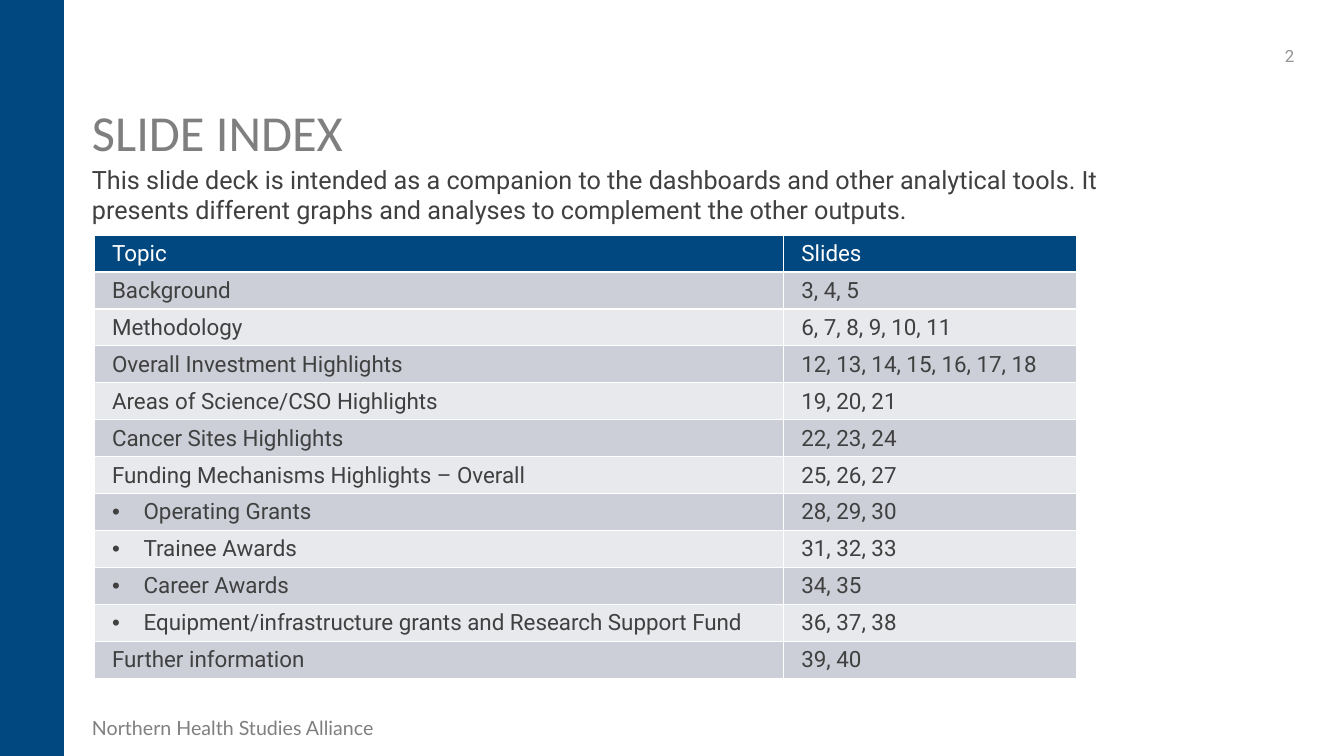
from lxml.etree import SubElement
from pptx import Presentation
from pptx.dml.color import RGBColor
from pptx.enum.shapes import MSO_SHAPE
from pptx.enum.text import MSO_ANCHOR, PP_ALIGN
from pptx.oxml.ns import qn
from pptx.util import Pt

BLUE, WHITE, GREY, DARK = "00487F", "FFFFFF", "7F7F7F", "404040"
BANDS = ["E7E9EC", "CCCFD8"]


def color(hex_value):
    return RGBColor.from_string(hex_value)


def write(frame, text, font, size, hex_value, **para_format):
    para = frame.paragraphs[0]
    for name, value in para_format.items():
        setattr(para, name, value)
    span = para.add_run()
    span.text = text
    span.font.name = font
    span.font.size = Pt(size)
    span.font.color.rgb = color(hex_value)
    return para


deck = Presentation()
deck.slide_width, deck.slide_height = Pt(960), Pt(540)
page = deck.slides.add_slide(deck.slide_layouts[6])

# Side bar
bar = page.shapes.add_shape(MSO_SHAPE.RECTANGLE, Pt(0), Pt(0), Pt(45.6), Pt(540))
bar.shadow.inherit = False
bar.fill.solid()
bar.fill.fore_color.rgb = color(BLUE)
bar.line.fill.background()

# Footer, title, page number and introduction
middle, top = MSO_ANCHOR.MIDDLE, MSO_ANCHOR.TOP
intro = ("This slide deck is intended as a companion to the dashboards and other "
         "analytical tools. It presents different graphs and analyses to "
         "complement the other outputs.")
texts = [
    ("Northern Health Studies Alliance", (58.6, 507.6, 231, 24.2), top, "Lato", 14, GREY, {}),
    ("SLIDE INDEX", (58.6, 54, 871, 85), middle, "Calibri", 36, GREY, {"line_spacing": 0.9}),
    ("2", (715.7, 25.2, 216, 28.8), middle, "Roboto", 12, "939393",
     {"alignment": PP_ALIGN.RIGHT}),
    (intro, (58.6, 113.8, 774.7, 51), top, "Roboto", 18, DARK, {}),
]
for text, place, anchor, font, size, hex_value, para_format in texts:
    box = page.shapes.add_textbox(*[Pt(length) for length in place])
    box.text_frame.word_wrap = True
    box.text_frame.vertical_anchor = anchor
    write(box.text_frame, text, font, size, hex_value, **para_format)

# Index table: a topic starting with a bullet is indented
rows = [
    ("Topic", "Slides"),
    ("Background", "3, 4, 5"),
    ("Methodology", "6, 7, 8, 9, 10, 11"),
    ("Overall Investment Highlights", "12, 13, 14, 15, 16, 17, 18"),
    ("Areas of Science/CSO Highlights", "19, 20, 21"),
    ("Cancer Sites Highlights", "22, 23, 24"),
    ("Funding Mechanisms Highlights – Overall", "25, 26, 27"),
    ("•Operating Grants", "28, 29, 30"),
    ("•Trainee Awards", "31, 32, 33"),
    ("•Career Awards", "34, 35"),
    ("•Equipment/infrastructure grants and Research Support Fund", "36, 37, 38"),
    ("Further information", "39, 40"),
]
table = page.shapes.add_table(len(rows), 2, Pt(67.1), Pt(167.8), Pt(702), Pt(316.8)).table
table.columns[0].width, table.columns[1].width = Pt(492.4), Pt(209.6)
cell_format = {"margin_left": Pt(13), "margin_right": Pt(13),
               "margin_top": Pt(3.6), "margin_bottom": Pt(3.6)}

for row_index, row in enumerate(rows):
    header = row_index == 0
    table.rows[row_index].height = Pt(26.4)
    for column_index, text in enumerate(row):
        cell = table.cell(row_index, column_index)
        for name, value in cell_format.items():
            setattr(cell, name, value)
        cell.vertical_anchor = MSO_ANCHOR.BOTTOM if header else middle

        # White borders come before the fill
        cell_properties = cell._tc.get_or_add_tcPr()
        for side in ("a:lnL", "a:lnR", "a:lnT", "a:lnB"):
            border = SubElement(cell_properties, qn(side), w=str(Pt(1)))
            SubElement(SubElement(border, qn("a:solidFill")), qn("a:srgbClr"), val=WHITE)
        cell.fill.solid()
        cell.fill.fore_color.rgb = color(BLUE if header else BANDS[row_index % 2])

        para = write(cell.text_frame, text.lstrip("•"), "Roboto", 16,
                     WHITE if header else DARK)
        para.font.bold = False
        para.runs[0].font.bold = False
        if text.startswith("•"):
            para_properties = para._p.get_or_add_pPr()
            para_properties.set("marL", str(Pt(22.5)))
            para_properties.set("indent", str(-Pt(22.5)))
            bullet_font = SubElement(para_properties, qn("a:buFont"), typeface="Arial")
            bullet = SubElement(para_properties, qn("a:buChar"), char="•")
            defaults = para_properties.find(qn("a:defRPr"))
            para_properties.remove(defaults)

deck.save("out.pptx")
